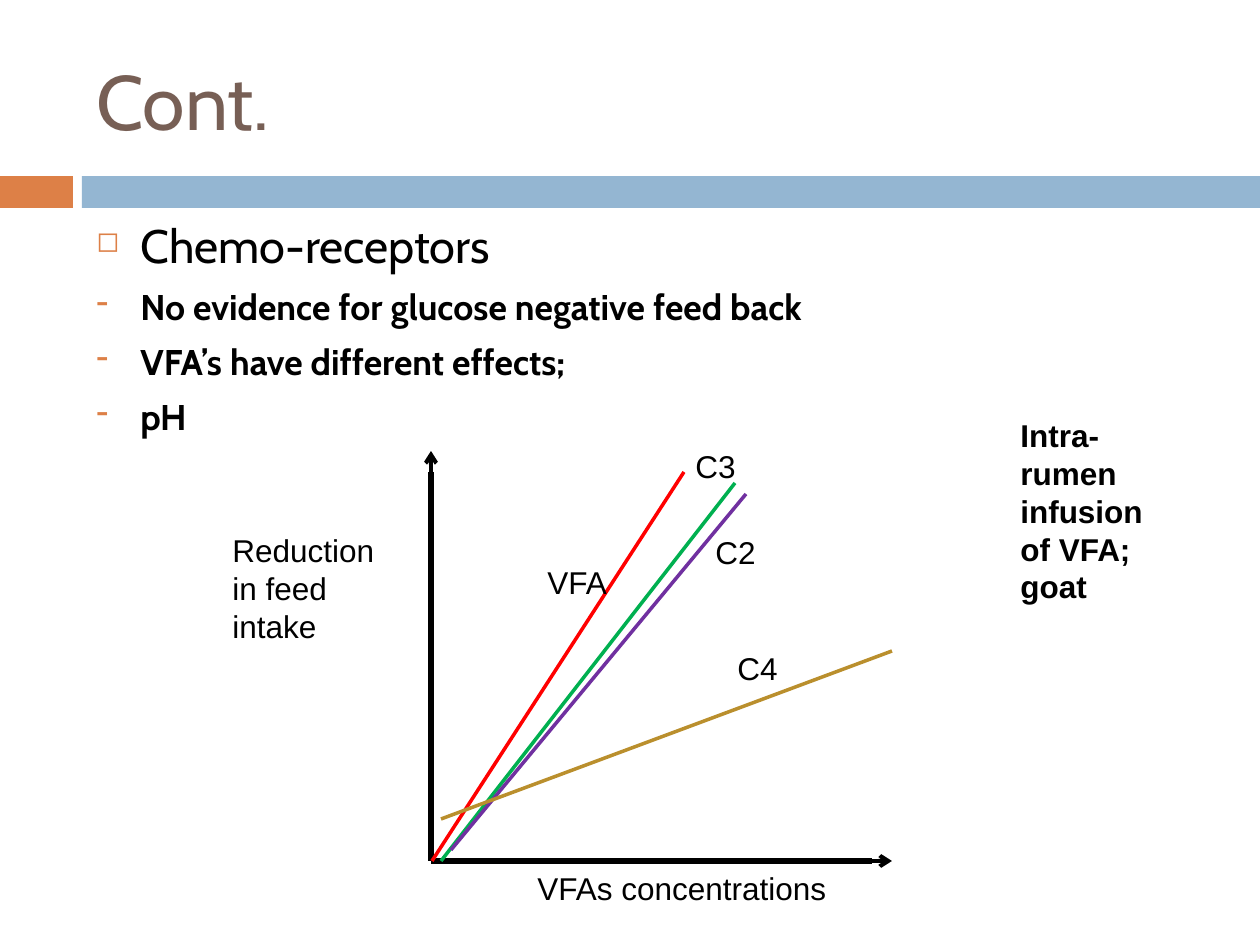
from lxml.etree import SubElement
from pptx import Presentation
from pptx.dml.color import RGBColor
from pptx.enum.shapes import MSO_CONNECTOR as Connector, MSO_SHAPE as Shape
from pptx.enum.text import MSO_ANCHOR as Anchor, MSO_AUTO_SIZE as AutoSize
from pptx.oxml.ns import qn
from pptx.util import Emu, Pt

EMU_PER_PX = 914400 / 126
BLACK, BROWN, ORANGE, BLUE = "000000", "775F55", "DD8047", "94B6D2"


def px(length):
    return Emu(round(length * EMU_PER_PX))


def color(hex_value):
    return RGBColor.from_string(hex_value)


def write(paragraph, text, font="Arial", size=18, fill=BLACK, bold=False):
    run = paragraph.add_run()
    run.text = text
    run.font.name = font
    run.font.size = Pt(size)
    run.font.bold = bold
    run.font.color.rgb = color(fill)


def add_bullet(paragraph, character, percent, indent=44):
    """Give the paragraph a hanging indent and an orange bullet."""
    properties = paragraph._p.get_or_add_pPr()
    properties.set("marL", str(px(indent)))
    properties.set("indent", str(-px(indent)))
    bullet_color = SubElement(properties, qn("a:buClr"))
    SubElement(bullet_color, qn("a:srgbClr"), val=ORANGE)
    SubElement(properties, qn("a:buSzPct"), val=str(percent * 1000))
    SubElement(properties, qn("a:buChar"), char=character)


class SlideBuilder:
    heading_font = "Cabin"

    def __init__(self, slide):
        self.slide = slide

    def bar(self, left, top, width, height, fill):
        shape = self.slide.shapes.add_shape(
            Shape.RECTANGLE, px(left), px(top), px(width), px(height))
        shape.shadow.inherit = False
        shape.fill.solid()
        shape.fill.fore_color.rgb = color(fill)
        shape.line.fill.background()

    def frame(self, left, top, width, height):
        box = self.slide.shapes.add_textbox(px(left), px(top), px(width), px(height))
        box.text_frame.word_wrap = True
        return box.text_frame

    def title(self, text, left, top, width, height):
        frame = self.frame(left, top, width, height)
        frame.vertical_anchor = Anchor.MIDDLE
        write(frame.paragraphs[0], text, font=self.heading_font, size=44, fill=BROWN)

    def bullets(self, items, left, top, width, height):
        frame = self.frame(left, top, width, height)
        for index, (text, character, percent, size, bold) in enumerate(items):
            paragraph = frame.add_paragraph() if index else frame.paragraphs[0]
            paragraph.space_before = Pt(7)
            add_bullet(paragraph, character, percent)
            write(paragraph, text, font=self.heading_font, size=size, bold=bold)

    def label(self, text, left, top, width, height=50, bold=False):
        frame = self.frame(left, top, width, height)
        frame.auto_size = AutoSize.SHAPE_TO_FIT_TEXT
        write(frame.paragraphs[0], text, bold=bold)

    def line(self, start, end, stroke=BLACK, width=2, arrow=False):
        connector = self.slide.shapes.add_connector(
            Connector.STRAIGHT, *map(px, start + end))
        connector.line.color.rgb = color(stroke)
        connector.line.width = Pt(width)
        if arrow:
            SubElement(connector.line._get_or_add_ln(), qn("a:tailEnd"), type="arrow")
        SubElement(connector._element.spPr, qn("a:effectLst"))


def main():
    presentation = Presentation()
    presentation.slide_width, presentation.slide_height = px(1260), px(945)
    builder = SlideBuilder(presentation.slides.add_slide(presentation.slide_layouts[6]))

    builder.bar(0, 176, 73, 32, ORANGE)
    builder.bar(82, 176, 1178, 32, BLUE)
    builder.title("Cont.", 84, 32, 1124, 136)
    points = ["No evidence for glucose negative feed back",
              "VFA’s have different effects;", "pH"]
    builder.bullets([("Chemo-receptors", "◻", 60, 26.8, False)]
                    + [(point, "-", 100, 20.4, True) for point in points],
                    84, 210, 1124, 199)

    origin = (431, 861)
    builder.line((431, 472), origin, width=3)
    builder.line((872, 861), origin, width=3)
    for start, end, stroke in [
        ((432, 861), (684, 472), "FF0000"),
        ((441, 861), (735, 483), "00B050"),
        ((451, 850), (746, 494), "7030A0"),
        ((441, 819), (892, 651), "BA8F2D"),
    ]:
        builder.line(start, end, stroke)
    builder.line((431, 504), (431, 451), width=2.25, arrow=True)
    builder.line((852, 861), (892, 861), width=2.25, arrow=True)

    builder.label("Reduction in feed intake", 220, 525, 189, 127)
    builder.label("VFAs concentrations", 525, 863, 315)
    builder.label("VFA", 535, 557, 105)
    builder.label("C3", 683, 441, 95)
    builder.label("C2", 703, 527, 84)
    builder.label("C4", 725, 643, 95)
    builder.label("Intra-rumen infusion of VFA; goat", 1008, 410, 179, 127, bold=True)

    presentation.save("out.pptx")


if __name__ == "__main__":
    main()
